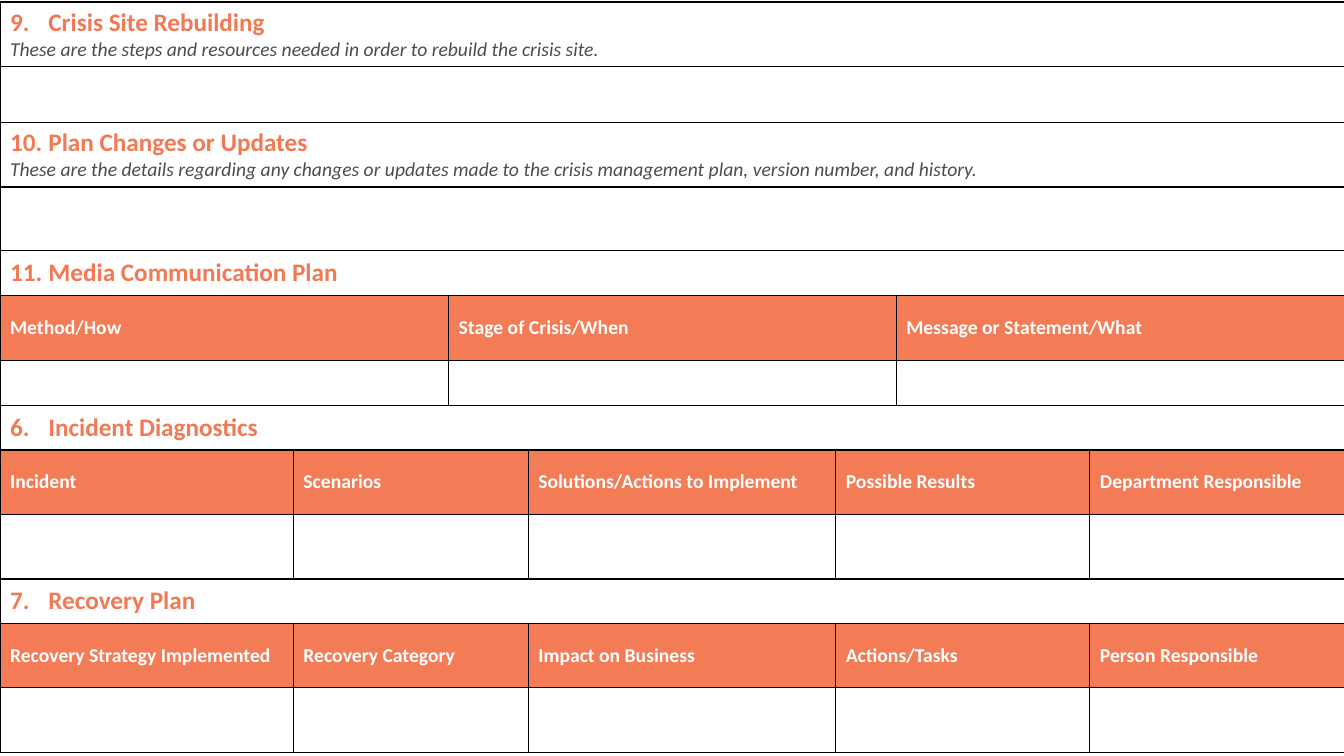
import pptx
import pptx.util
import pptx.dml.color
import pptx.enum.text
import pptx.oxml.ns
from lxml import etree

Inches = pptx.util.Inches
RGBColor = pptx.dml.color.RGBColor

HEADING = RGBColor(0xF2, 0x79, 0x54)
BAND = RGBColor(0xF3, 0x7C, 0x57)
GREY = RGBColor(0x4D, 0x4D, 0x4D)
WHITE = RGBColor(0xFF, 0xFF, 0xFF)
BLACK = RGBColor(0x00, 0x00, 0x00)

COLUMNS = [2.91, 1.54, 0.79, 3.05, 0.6, 1.92, 2.53]
FULL = (7,)
THREE = (2, 3, 2)
FIVE = (1, 2, 1, 2, 1)

SECTIONS = [
    (9, "Crisis Site Rebuilding",
     "These are the steps and resources needed in order to rebuild the crisis site.",
     FULL, [], (0.64, 0.55)),
    (10, "Plan Changes or Updates",
     "These are the details regarding any changes or updates made to the crisis management plan, "
     "version number, and history.",
     FULL, [], (0.64, 0.63)),
    (11, "Media Communication Plan", None, THREE,
     ["Method/How", "Stage of Crisis/When", "Message or Statement/What"],
     (0.45, 0.64, 0.45)),
    (6, "Incident Diagnostics", None, FIVE,
     ["Incident", "Scenarios", "Solutions/Actions to Implement", "Possible Results",
      "Department Responsible"],
     (0.44, 0.64, 0.64)),
    (7, "Recovery Plan", None, FIVE,
     ["Recovery Strategy Implemented", "Recovery Category", "Impact on Business",
      "Actions/Tasks", "Person Responsible"],
     (0.44, 0.64, 0.64)),
]


def add_text(p, text, size=14, color=WHITE, bold=False, italic=False):
    r = p.add_run()
    r.text = text
    r.font.name = "Calibri"
    r.font.size = pptx.util.Pt(size)
    r.font.color.rgb = color
    r.font.bold = bold
    r.font.italic = italic


def add_element(parent, tag, **attributes):
    e = etree.SubElement(parent, pptx.oxml.ns.qn(tag))
    for name, value in attributes.items():
        e.set(name, str(value))
    return e


class PlanSlide:
    def __init__(self, prs):
        self.s = prs.slides.add_slide(prs.slide_layouts[6])

    def border(self, cell):
        tcPr = cell._tc.get_or_add_tcPr()
        for side in ("L", "R", "T", "B"):
            ln = add_element(tcPr, f"a:ln{side}", w=pptx.util.Pt(1))
            fill = add_element(ln, "a:solidFill")
            add_element(fill, "a:srgbClr", val=BLACK)

    def number(self, p, start):
        pPr = p._p.get_or_add_pPr()
        pPr.set("marL", str(Inches(0.38)))
        pPr.set("indent", str(Inches(-0.38)))
        add_element(pPr, "a:buFont", typeface="+mj-lt")
        add_element(pPr, "a:buAutoNum", type="arabicPeriod", startAt=start)

    def heading(self, cell, start, title, description):
        tf = cell.text_frame
        p = tf.paragraphs[0]
        self.number(p, start)
        add_text(p, title, size=18, color=HEADING, bold=True)
        if description:
            add_text(tf.add_paragraph(), description, color=GREY, italic=True)

    def row(self, tbl, index, spans, labels=(), fill=WHITE):
        col = 0
        for i, span in enumerate(spans):
            cell = tbl.cell(index, col)
            if span > 1:
                cell.merge(tbl.cell(index, col + span - 1))
            if labels:
                add_text(cell.text_frame.paragraphs[0], labels[i], bold=True)
            for c in range(col, col + span):
                part = tbl.cell(index, c)
                self.border(part)
                part.fill.solid()
                part.fill.fore_color.rgb = fill
                part.vertical_anchor = pptx.enum.text.MSO_ANCHOR.MIDDLE
            col += span

    def table(self, sections, left, top):
        heights = [h for section in sections for h in section[-1]]
        tbl = self.s.shapes.add_table(
            len(heights), len(COLUMNS), Inches(left), Inches(top),
            Inches(sum(COLUMNS)), Inches(sum(heights))).table
        tbl.first_row = False
        tbl.horz_banding = False
        for column, width in zip(tbl.columns, COLUMNS):
            column.width = Inches(width)
        for row, height in zip(tbl.rows, heights):
            row.height = Inches(height)
        index = 0
        for start, title, description, spans, labels, rows in sections:
            self.row(tbl, index, FULL)
            self.heading(tbl.cell(index, 0), start, title, description)
            if labels:
                self.row(tbl, index + 1, spans, labels, BAND)
            index += len(rows)
            self.row(tbl, index - 1, spans)


def main():
    prs = pptx.Presentation()
    prs.slide_width = Inches(13.33)
    prs.slide_height = Inches(7.5)
    PlanSlide(prs).table(SECTIONS, 0, 0.02)
    prs.save("out.pptx")


if __name__ == "__main__":
    main()
